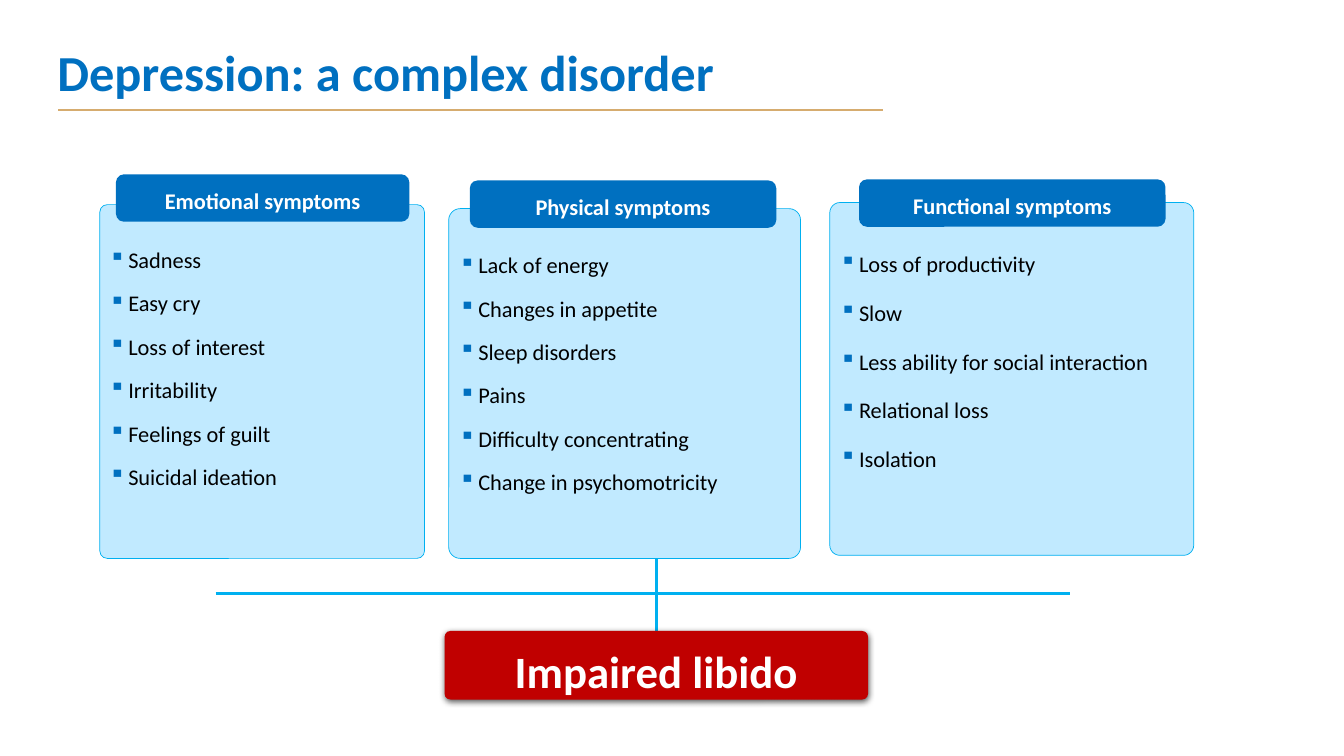
from lxml import etree
from pptx import Presentation
from pptx import util as u
from pptx.dml.color import RGBColor
from pptx.enum import shapes, text
from pptx.oxml import parse_xml
from pptx.oxml.ns import nsdecls, qn

BLUE = RGBColor(0x00, 0x70, 0xC0)
CYAN = RGBColor(0x00, 0xB0, 0xF0)
PALE = RGBColor(0xC1, 0xEA, 0xFF)
GOLD = RGBColor(0xD6, 0xAC, 0x6F)
RED = RGBColor(0xC0, 0x00, 0x00)
WHITE = RGBColor(0xFF, 0xFF, 0xFF)
BLACK = RGBColor(0x00, 0x00, 0x00)
FONT = "Calibri"

TITLE = "Depression: a complex disorder"
OUTCOME = "Impaired libido"
COLUMNS = [
    {"name": "Emotional symptoms", "tab": (1.15, 1.73, 2.91, 0.47),
     "panel": (0.99, 2.03, 3.22, 3.51), "corner": 0.023, "spacing": None,
     "items": ["Sadness", "Easy cry", "Loss of interest", "Irritability",
               "Feelings of guilt", "Suicidal ideation"]},
    {"name": "Physical symptoms", "tab": (4.66, 1.79, 3.04, 0.47),
     "panel": (4.45, 2.07, 3.49, 3.47), "corner": 0.033, "spacing": None,
     "items": ["Lack of energy", "Changes in appetite", "Sleep disorders",
               "Pains", "Difficulty concentrating",
               "Change in psychomotricity"]},
    {"name": "Functional symptoms", "tab": (8.52, 1.78, 3.04, 0.47),
     "panel": (8.23, 2.01, 3.61, 3.5), "corner": 0.029, "spacing": 1.2,
     "items": ["Loss of productivity", "Slow",
               "Less ability for social interaction", "Relational loss",
               "Isolation"]},
]
LINES = [
    ((0.58, 1.09), (8.76, 1.09), GOLD, 1),
    ((6.51, 5.16), (6.51, 6.45), CYAN, 2.25),
    ((2.14, 5.89), (10.61, 5.89), CYAN, 2.25),
]


def style(p, size, color, bold=False):
    for r in p.runs:
        f = r.font
        f.name, f.size, f.bold = FONT, u.Pt(size), bold
        f.color.rgb = color


def set_margins(tf, *sides):
    (tf.margin_left, tf.margin_top,
     tf.margin_right, tf.margin_bottom) = map(u.Inches, sides)


def add_line(s, start, end, color, width):
    c = s.shapes.add_connector(shapes.MSO_CONNECTOR.STRAIGHT,
                               *map(u.Inches, start + end))
    c.line.color.rgb = color
    c.line.width = u.Pt(width)
    etree.SubElement(c._element.spPr, qn("a:effectLst"))


def add_box(s, box, fill, corner=None):
    sp = s.shapes.add_shape(shapes.MSO_SHAPE.ROUNDED_RECTANGLE,
                            *map(u.Inches, box))
    sp.shadow.inherit = False
    sp.fill.solid()
    sp.fill.fore_color.rgb = fill
    sp.line.fill.background()
    if corner is not None:
        sp.adjustments[0] = corner
    sp.text_frame.word_wrap = True
    return sp


def add_label(s, box, label, fill, size, corner=None):
    sp = add_box(s, box, fill, corner)
    tf = sp.text_frame
    tf.vertical_anchor = text.MSO_ANCHOR.MIDDLE
    p = tf.paragraphs[0]
    p.text = label
    p.alignment = text.PP_ALIGN.CENTER
    p.line_spacing = 1.2
    style(p, size, WHITE, True)
    return sp


def add_bullet(p):
    pPr = p._p.get_or_add_pPr()
    pPr.set("marL", str(u.Inches(0.19)))
    pPr.set("indent", str(-u.Inches(0.19)))
    color = etree.SubElement(pPr, qn("a:buClr"))
    etree.SubElement(color, qn("a:srgbClr")).set("val", str(BLUE))
    etree.SubElement(pPr, qn("a:buChar")).set("char", "▪")


def add_panel(s, column):
    sp = add_box(s, column["panel"], PALE, column["corner"])
    sp.line.color.rgb = CYAN
    sp.line.width = u.Pt(0.5)
    tf = sp.text_frame
    tf.vertical_anchor = text.MSO_ANCHOR.TOP
    set_margins(tf, 0.07, 0.39, 0.07, 0.05)
    for i, item in enumerate(column["items"]):
        p = tf.add_paragraph() if i else tf.paragraphs[0]
        p.text = item
        add_bullet(p)
        p.alignment = text.PP_ALIGN.LEFT
        p.line_spacing = column["spacing"]
        if i:
            p.space_before = u.Pt(11.8)
        style(p, 16, BLACK)


def add_shadow(sp):
    effects = sp._element.spPr.find(qn("a:effectLst"))
    effects.append(parse_xml(
        f'<a:outerShdw {nsdecls("a")} blurRad="{u.Pt(4.5)}" '
        f'dist="{u.Pt(1.5)}" dir="5400000" rotWithShape="0">'
        '<a:srgbClr val="000000"><a:alpha val="63000"/></a:srgbClr>'
        '</a:outerShdw>'))


def main():
    prs = Presentation()
    prs.slide_width, prs.slide_height = u.Inches(13.33), u.Inches(7.5)
    s = prs.slides.add_slide(prs.slide_layouts[6])

    title = s.shapes.add_textbox(*map(u.Inches, (0.47, 0.36, 10.84, 0.71)))
    tf = title.text_frame
    tf.word_wrap = True
    tf.text = TITLE
    style(tf.paragraphs[0], 36, BLUE, True)

    for line in LINES:
        add_line(s, *line)

    outcome = add_label(s, (4.41, 6.26, 4.2, 0.68), OUTCOME, RED, 32, 0.085)
    set_margins(outcome.text_frame, 0.07, 0, 0.07, 0)
    add_shadow(outcome)

    for column in COLUMNS:
        add_panel(s, column)
        add_label(s, column["tab"], column["name"], BLUE, 16)

    prs.save("out.pptx")


if __name__ == "__main__":
    main()
